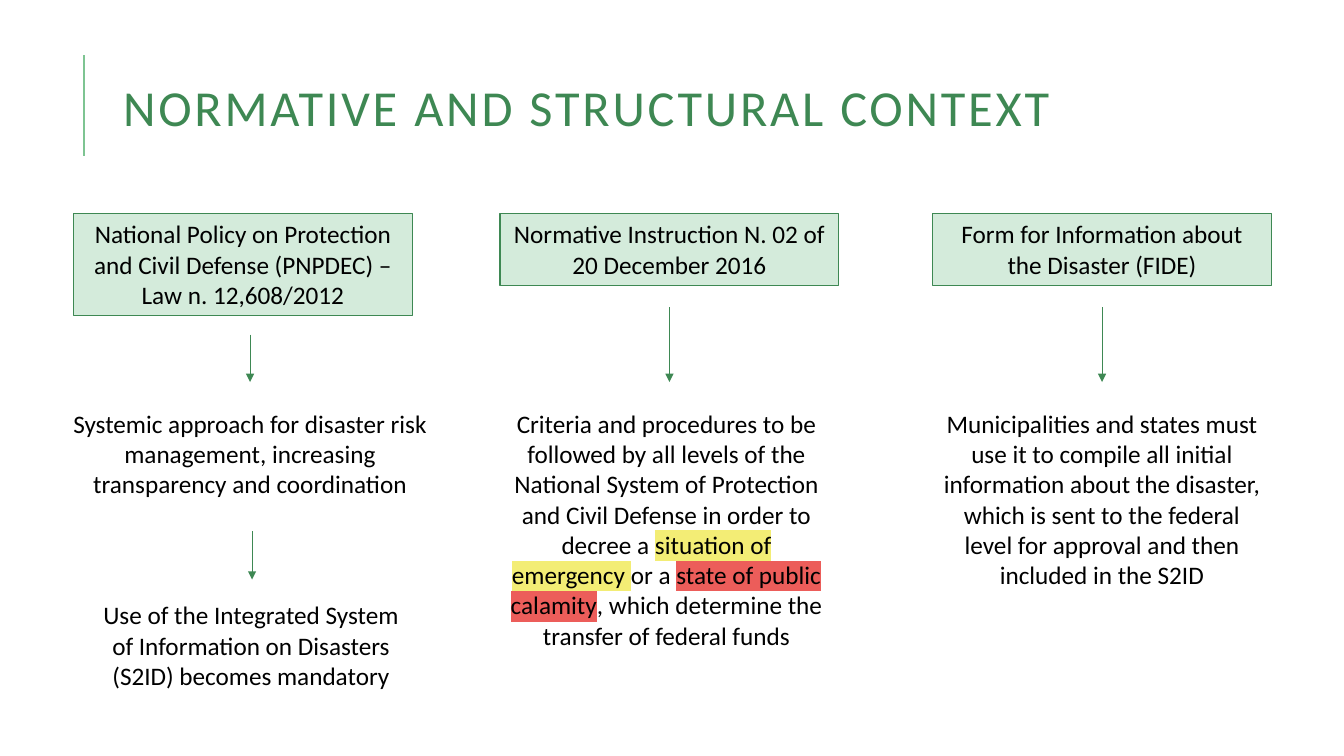
import pptx
import pptx.dml.color
import pptx.enum.shapes
import pptx.enum.text
import pptx.oxml
import pptx.oxml.ns
import pptx.util

COLORS = {
    "green": "3E8853",
    "rule": "7EC492",
    "pale": "D4EBDB",
    "text": "000000",
    "yellow": "F3ED75",
    "red": "EC5D5A",
}
FONT = "Calibri"
HEADING_TOP = 2.12
HEADING_WIDTH = 3.36
BODY_TOP = 4.0
ARROW_END = 3.79

COLUMNS = [
    {
        "left": 0.73,
        "heading": "National Policy on Protection and Civil Defense (PNPDEC) – Law n. 12,608/2012",
        "height": 1.01,
        "arrows": [(1.75, 3.32, ARROW_END), (1.77, 5.27, 5.75)],
        "bodies": [
            ((-0.17, BODY_TOP, 3.84, 1.01),
             [("Systemic approach for disaster risk management, increasing transparency and coordination", None)]),
            ((0.15, 5.9, 3.22, 1.01),
             [("Use of the Integrated System of Information on Disasters (S2ID) becomes mandatory", None)]),
        ],
    },
    {
        "left": 4.96,
        "heading": "Normative Instruction N. 02 of 20 December 2016",
        "height": 0.71,
        "arrows": [(HEADING_WIDTH / 2, 3.05, ARROW_END)],
        "bodies": [
            ((-0.06, BODY_TOP, 3.42, 2.52),
             [("Criteria and procedures to be followed by all levels of the National System of "
               "Protection and Civil Defense in order to decree a ", None),
              ("situation of emergency ", "yellow"),
              ("or a ", None),
              ("state of public calamity", "red"),
              (", which determine the transfer of federal funds", None)]),
        ],
    },
    {
        "left": 9.25,
        "heading": "Form for Information about the Disaster (FIDE)",
        "height": 0.71,
        "arrows": [(HEADING_WIDTH / 2, 3.05, ARROW_END)],
        "bodies": [
            ((0, BODY_TOP, HEADING_WIDTH, 1.92),
             [("Municipalities and states must use it to compile all initial information about the "
               "disaster, which is sent to the federal level for approval and then included in the S2ID", None)]),
        ],
    },
]


def color(name):
    """Return the named colour."""
    return pptx.dml.color.RGBColor.from_string(COLORS[name])


def inches(*lengths):
    """Convert lengths in inches."""
    return [pptx.util.Inches(length) for length in lengths]


def style_span(span, size, color_name):
    """Set the font, size and colour of a run."""
    span.font.name = FONT
    span.font.size = pptx.util.Pt(size)
    span.font.color.rgb = color(color_name)


def highlight(span, color_name):
    """Mark a run with a background colour."""
    mark = pptx.oxml.parse_xml(
        f'<a:highlight {pptx.oxml.ns.nsdecls("a")}><a:srgbClr val="{COLORS[color_name]}"/></a:highlight>')
    span.font._element.find(pptx.oxml.ns.qn("a:solidFill")).addnext(mark)


def fill_text(box, spans):
    """Write centred, wrapped runs into a box."""
    frame = box.text_frame
    frame.word_wrap = True
    frame.vertical_anchor = pptx.enum.text.MSO_ANCHOR.TOP
    para = frame.paragraphs[0]
    para.alignment = pptx.enum.text.PP_ALIGN.CENTER
    for text, mark in spans:
        span = para.add_run()
        span.text = text
        style_span(span, 18, "text")
        if mark:
            highlight(span, mark)


def add_line(page, x, top, bottom, color_name, width, arrow=False):
    """Draw a vertical line, with an arrowhead at its lower end if wanted."""
    line = page.shapes.add_connector(
        pptx.enum.shapes.MSO_CONNECTOR.STRAIGHT, *inches(x, top, x, bottom))
    line.line.color.rgb = color(color_name)
    line.line.width = pptx.util.Pt(width)
    namespace = pptx.oxml.ns.nsdecls("a")
    if arrow:
        line.line._get_or_add_ln().append(pptx.oxml.parse_xml(f'<a:tailEnd {namespace} type="triangle"/>'))
    line._element.spPr.append(pptx.oxml.parse_xml(f"<a:effectLst {namespace}/>"))


def add_title(page, left, top, width, height):
    """Place the title and the rule beside it."""
    add_line(page, left - 0.29, top + 0.26, top + 1.26, "rule", 1.5)
    title = page.shapes.title
    title.left, title.top, title.width, title.height = inches(left, top, width, height)
    frame = title.text_frame
    frame.text = "NORMATIVE AND STRUCTURAL CONTEXT"
    frame.word_wrap = True
    frame.vertical_anchor = pptx.enum.text.MSO_ANCHOR.MIDDLE
    para = frame.paragraphs[0]
    para.alignment = pptx.enum.text.PP_ALIGN.LEFT
    para.line_spacing = 0.8
    span = para.runs[0]
    style_span(span, 36, "green")
    span.font._element.set("spc", "200")


def add_column(page, left, heading, height, arrows, bodies):
    """Place a heading box with its arrows and texts below."""
    box = page.shapes.add_shape(
        pptx.enum.shapes.MSO_SHAPE.RECTANGLE, *inches(left, HEADING_TOP, HEADING_WIDTH, height))
    box.shadow.inherit = False
    box.fill.solid()
    box.fill.fore_color.rgb = color("pale")
    box.line.color.rgb = color("green")
    box.line.width = pptx.util.Pt(1)
    fill_text(box, [(heading, None)])
    for offset, top, bottom in arrows:
        add_line(page, left + offset, top, bottom, "green", 0.75, arrow=True)
    for (offset, top, width, body_height), spans in bodies:
        body = page.shapes.add_textbox(*inches(left + offset, top, width, body_height))
        fill_text(body, spans)


def main():
    """Build and save the slide."""
    deck = pptx.Presentation()
    deck.slide_width, deck.slide_height = inches(13.33, 7.5)
    page = deck.slides.add_slide(deck.slide_layouts[5])
    add_title(page, 1.12, 0.29, 10.63, 1.64)
    for column in COLUMNS:
        add_column(page, **column)
    deck.save("out.pptx")


if __name__ == "__main__":
    main()
